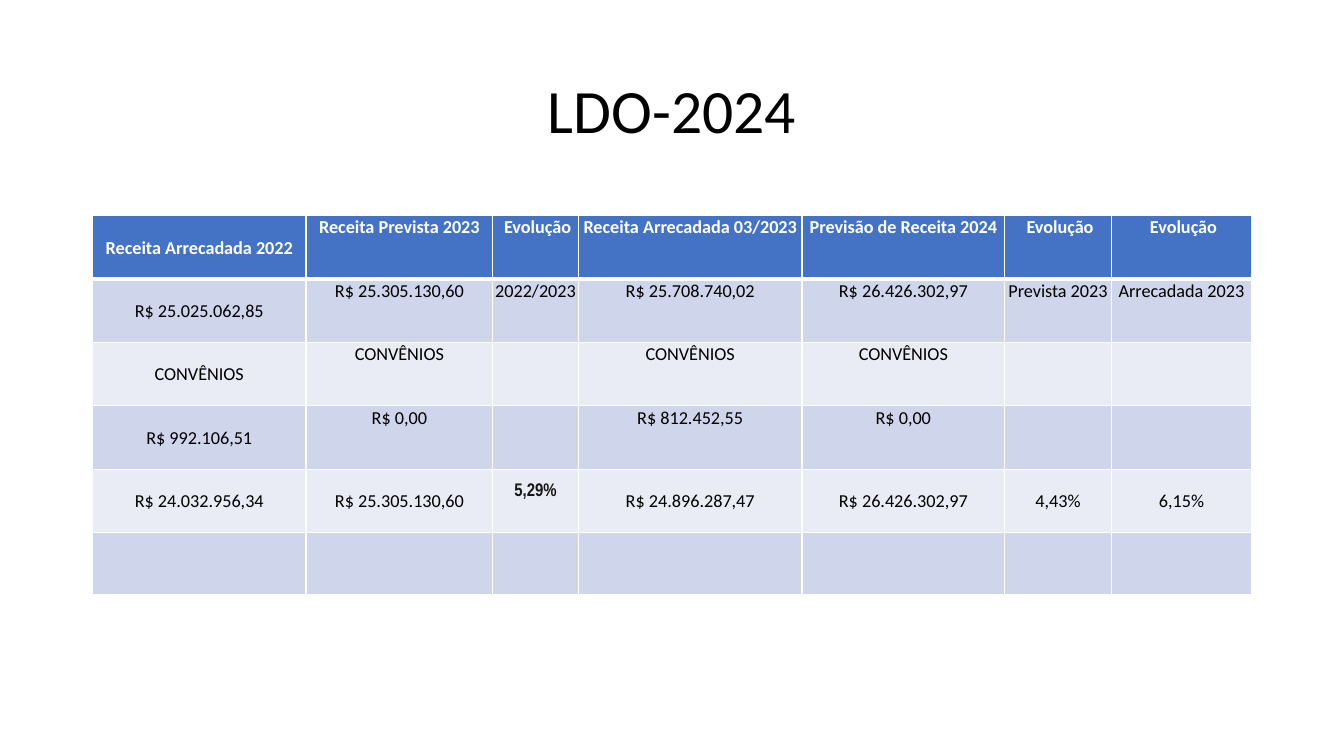
from dataclasses import dataclass

from lxml.etree import SubElement
from pptx import Presentation
from pptx.dml.color import RGBColor as Rgb
from pptx.enum.text import MSO_ANCHOR as Anchor, PP_ALIGN as Align
from pptx.oxml.ns import qn
from pptx.util import Pt


@dataclass(frozen=True)
class Theme:
    font: str = "Calibri"
    accent_font: str = "Arial Narrow"
    title_size: float = 44
    cell_size: float = 13
    white: str = "FFFFFF"
    black: str = "000000"
    accent: str = "181717"
    header: str = "4472C4"
    bands: tuple = ("CFD5EA", "E9EBF5")


THEME = Theme()
TITLE_BOX = (66, 28.8, 828, 104.4)
TABLE_BOX = (66, 154, 828, 270.6)
COLUMN_WIDTHS = (152.6, 133.3, 61.2, 159.8, 144.7, 76.3, 100.1)
ROW_HEIGHTS = (45.3,) * 5 + (44.1,)
ROWS = (
    ("Receita Arrecadada 2022", "Receita Prevista 2023", " Evolução",
     "Receita Arrecadada 03/2023", "Previsão de Receita 2024", " Evolução", " Evolução"),
    ("R$ 25.025.062,85", "R$ 25.305.130,60", "2022/2023", "R$ 25.708.740,02",
     "R$ 26.426.302,97", "Prevista 2023", "Arrecadada 2023"),
    ("CONVÊNIOS", "CONVÊNIOS", "", "CONVÊNIOS", "CONVÊNIOS", "", ""),
    ("R$ 992.106,51", "R$ 0,00", "", "R$ 812.452,55", "R$ 0,00", "", ""),
    ("R$ 24.032.956,34", "R$ 25.305.130,60", "5,29%", "R$ 24.896.287,47",
     "R$ 26.426.302,97", "4,43%", "6,15%"),
    ("",) * 7,
)
TOTALS_ROW = 4
RATE_CELL = (TOTALS_ROW, 2)


def apply(target, formats):
    for name, value in formats.items():
        setattr(target, name, value)


def write(frame, text, font, size, color, bold=False):
    para = frame.paragraphs[0]
    para.alignment = Align.CENTER
    span = para.add_run()
    span.text = text
    apply(span.font, {"name": font, "size": Pt(size), "bold": bold})
    span.font.color.rgb = Rgb.from_string(color)
    return para


def add_title(page, box):
    title = page.shapes.title
    apply(title, dict(zip(("left", "top", "width", "height"), map(Pt, box))))
    title.text_frame.vertical_anchor = Anchor.MIDDLE
    para = write(title.text_frame, "LDO-2024", THEME.font, THEME.title_size, THEME.black)
    para.line_spacing = 0.9


def set_borders(cell, widths):
    properties = cell._tc.get_or_add_tcPr()
    for side, width in widths.items():
        line = SubElement(properties, qn(f"a:ln{side}"), w=str(Pt(width)))
        fill = SubElement(line, qn("a:solidFill"))
        SubElement(fill, qn("a:srgbClr"), val=THEME.white)


def fill_cell(cell, row, column, text):
    is_header = row == 0
    # The heavier rule lies between the header and the first band
    set_borders(cell, {"L": 1, "R": 1, "T": 3 if row == 1 else 1, "B": 3 if is_header else 1})
    cell.fill.solid()
    cell.fill.fore_color.rgb = Rgb.from_string(
        THEME.header if is_header else THEME.bands[(row - 1) % 2])
    if not text:
        return

    is_rate = (row, column) == RATE_CELL
    centred = column == 0 or row == TOTALS_ROW
    apply(cell, {
        "margin_left": Pt(0.72), "margin_right": Pt(0.72), "margin_top": Pt(0.72),
        "margin_bottom": Pt(14 if is_rate else 0),
        "vertical_anchor": Anchor.MIDDLE if centred else Anchor.TOP,
    })
    color = THEME.white if is_header else THEME.accent if is_rate else THEME.black
    write(cell.text_frame, text, THEME.accent_font if is_rate else THEME.font,
          THEME.cell_size, color, is_header or is_rate)


def add_revenue_table(page, box):
    table = page.shapes.add_table(len(ROWS), len(COLUMN_WIDTHS), *map(Pt, box)).table
    for column, width in zip(table.columns, COLUMN_WIDTHS):
        column.width = Pt(width)
    for row, height in zip(table.rows, ROW_HEIGHTS):
        row.height = Pt(height)
    for row, texts in enumerate(ROWS):
        for column, text in enumerate(texts):
            fill_cell(table.cell(row, column), row, column, text)


def main():
    deck = Presentation()
    apply(deck, {"slide_width": Pt(960), "slide_height": Pt(540)})
    page = deck.slides.add_slide(deck.slide_layouts[5])
    add_title(page, TITLE_BOX)
    add_revenue_table(page, TABLE_BOX)
    deck.save("out.pptx")


if __name__ == "__main__":
    main()
